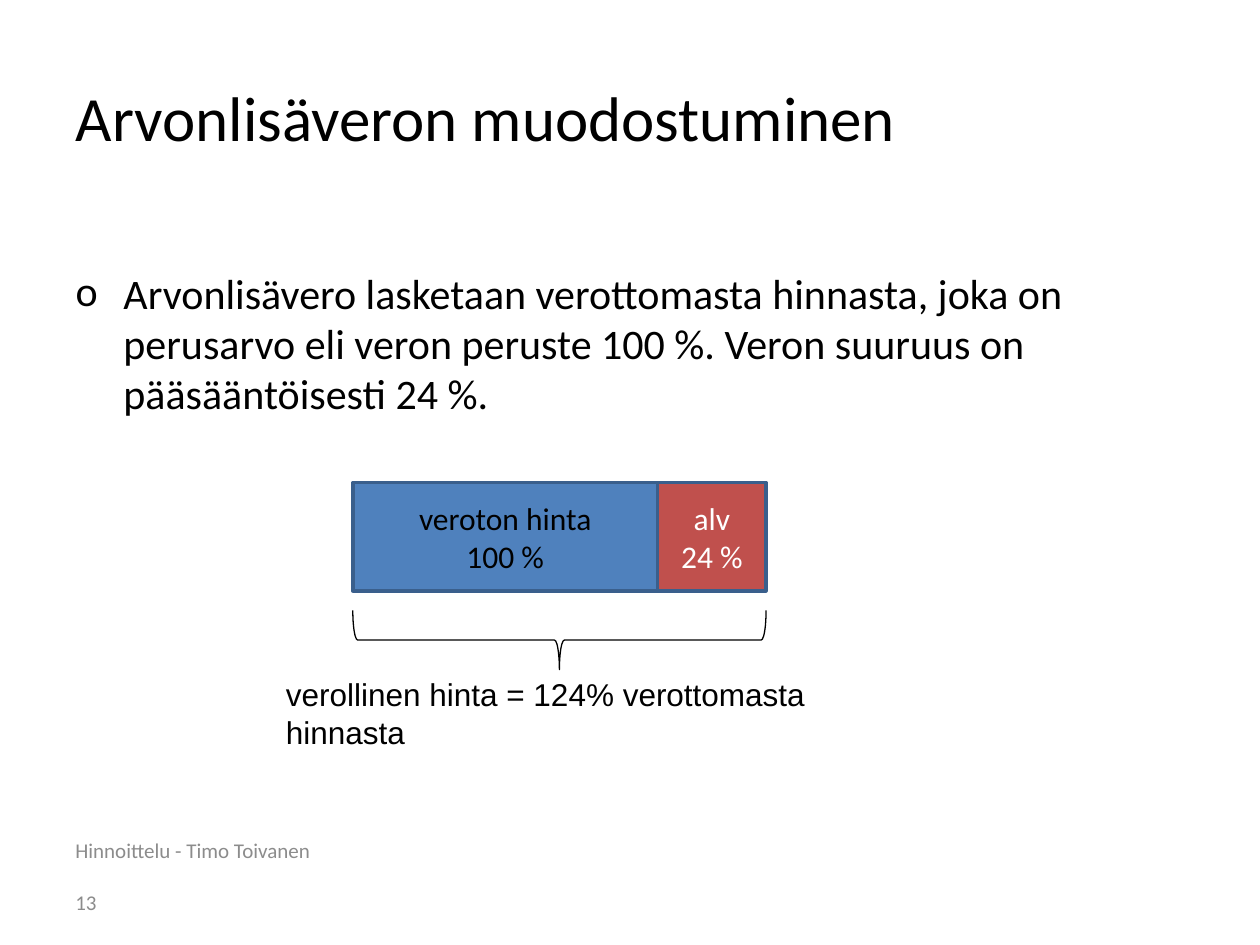
from dataclasses import dataclass

from lxml.etree import SubElement
from pptx import Presentation
from pptx.dml.color import RGBColor
from pptx.enum.shapes import MSO_SHAPE
from pptx.enum.text import MSO_ANCHOR, MSO_AUTO_SIZE, PP_ALIGN
from pptx.oxml.ns import qn
from pptx.util import Inches, Pt


@dataclass(frozen=True)
class Theme:
    """Colours, fonts and type sizes of the slide."""
    black: str = "000000"
    white: str = "FFFFFF"
    gray: str = "8C8C8C"
    price: str = "4F81BD"
    tax: str = "C0504D"
    outline: str = "3A5F8C"
    font: str = "Calibri"
    caption_font: str = "Arial"
    title_size: int = 36
    body_size: int = 24
    label_size: int = 18
    footer_size: int = 12


THEME = Theme()
COLUMNS, ROWS = 100, 75
CELL = Inches(0.1)
MARGIN = 5
BAR_LEFT, BAR_TOP, BAR_HEIGHT = 28, 38.3, 8.6
PRICE_WIDTH, TAX_WIDTH = 24.2, 8.6
BRACE_TOP, BRACE_DEPTH = 48.45, 4.7


def grid(*cells):
    """Turn grid columns and rows into slide lengths."""
    return [round(cell * CELL) for cell in cells]


def place(shape, left, top, width, height):
    """Move and size a shape on the grid."""
    shape.left, shape.top, shape.width, shape.height = grid(left, top, width, height)


def write(shape, text, size=THEME.label_size, color=THEME.black, font=THEME.font,
          align=PP_ALIGN.LEFT, anchor=MSO_ANCHOR.MIDDLE):
    """Fill a shape with formatted text, one paragraph per line."""
    frame = shape.text_frame
    frame.word_wrap = True
    frame.auto_size = MSO_AUTO_SIZE.NONE
    frame.vertical_anchor = anchor
    frame.text = text
    for para in frame.paragraphs:
        para.alignment = align
        para.space_before = Pt(0)
        for span in para.runs:
            span.font.name = font
            span.font.size = Pt(size)
            span.font.color.rgb = RGBColor.from_string(color)


def add_bullet(para, mark, indent):
    """Give a paragraph a hanging bullet."""
    properties = para._p.get_or_add_pPr()
    properties.set("marL", str(indent))
    properties.set("indent", str(-indent))
    SubElement(properties, qn("a:buFont"), typeface=THEME.font)
    SubElement(properties, qn("a:buChar"), char=mark)


def add_label(slide, text, left, top, width, height, **text_format):
    """Add a text box on the grid."""
    box = slide.shapes.add_textbox(*grid(left, top, width, height))
    write(box, text, **text_format)


def add_bar_part(slide, text, left, width, fill, color):
    """Add one part of the price bar."""
    part = slide.shapes.add_shape(MSO_SHAPE.RECTANGLE,
                                  *grid(left, BAR_TOP, width, BAR_HEIGHT))
    part.shadow.inherit = False
    part.fill.solid()
    part.fill.fore_color.rgb = RGBColor.from_string(fill)
    part.line.color.rgb = RGBColor.from_string(THEME.outline)
    part.line.width = Pt(2)
    write(part, text, color=color, align=PP_ALIGN.CENTER)


def add_brace_below(slide, left, top, width, depth):
    """Add a brace that spans a width and points down."""
    turn = (width - depth) / 2
    brace = slide.shapes.add_shape(MSO_SHAPE.LEFT_BRACE,
                                   *grid(left + turn, top - turn, depth, width))
    brace.rotation = 270
    brace.shadow.inherit = False
    brace.fill.background()
    brace.line.color.rgb = RGBColor.from_string(THEME.black)
    brace.line.width = Pt(0.75)


def main():
    """Build and save the slide."""
    deck = Presentation()
    deck.slide_width, deck.slide_height = grid(COLUMNS, ROWS)
    slide = deck.slides.add_slide(deck.slide_layouts[1])

    title, body = slide.placeholders
    place(title, MARGIN, 3, 79.5, 12.5)
    write(title, "Arvonlisäveron muodostuminen", size=THEME.title_size)
    place(body, MARGIN, 20.7, COLUMNS - 2 * MARGIN, 42.5)
    write(body, "Arvonlisävero lasketaan verottomasta hinnasta, joka on perusarvo "
          "eli veron peruste 100 %. Veron suuruus on pääsääntöisesti 24 %.",
          size=THEME.body_size, anchor=MSO_ANCHOR.TOP)
    add_bullet(body.text_frame.paragraphs[0], "o", Inches(0.38))

    add_bar_part(slide, "veroton hinta\n100 %", BAR_LEFT, PRICE_WIDTH,
                 THEME.price, THEME.black)
    add_bar_part(slide, "alv\n24 %", BAR_LEFT + PRICE_WIDTH, TAX_WIDTH,
                 THEME.tax, THEME.white)
    add_brace_below(slide, BAR_LEFT, BRACE_TOP, PRICE_WIDTH + TAX_WIDTH, BRACE_DEPTH)
    add_label(slide, "verollinen hinta = 124% verottomasta hinnasta",
              21.7, 53.1, 50.8, 7.1, font=THEME.caption_font, anchor=MSO_ANCHOR.TOP)

    footer = {"size": THEME.footer_size, "color": THEME.gray}
    add_label(slide, "Hinnoittelu - Timo Toivanen", MARGIN, 65.5, 31.7, 4, **footer)
    add_label(slide, "13", MARGIN, 69.6, 12, 4, **footer)
    deck.save("out.pptx")


if __name__ == "__main__":
    main()
